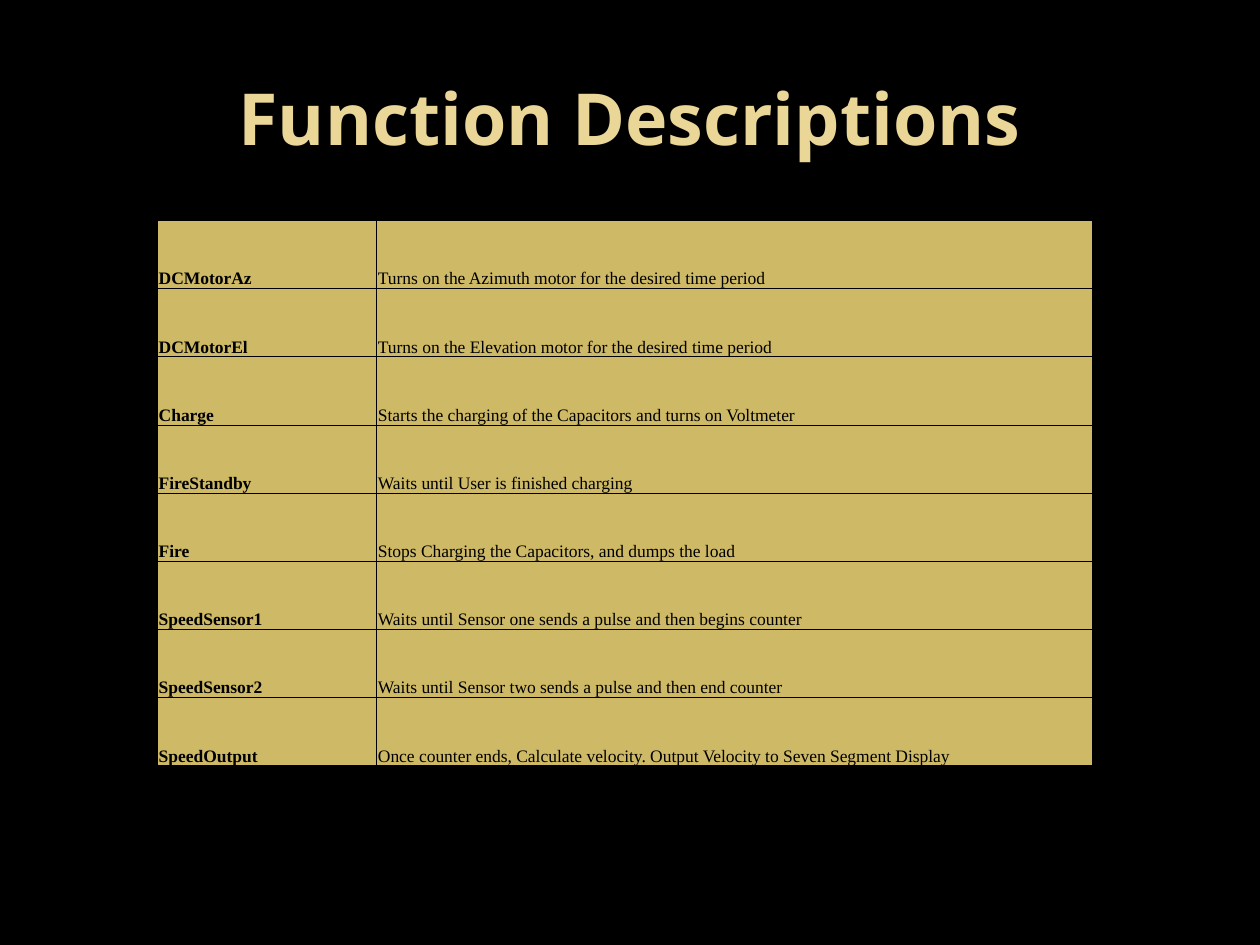
from lxml.etree import SubElement
from pptx import Presentation
from pptx.dml.color import RGBColor
from pptx.enum.text import MSO_ANCHOR, PP_ALIGN
from pptx.oxml.ns import qn
from pptx.util import Inches, Pt

TITLE = "Function Descriptions"
FUNCTIONS = [
    ("DCMotorAz", "Turns on the Azimuth motor for the desired time period"),
    ("DCMotorEl", "Turns on the Elevation motor for the desired time period"),
    ("Charge", "Starts the charging of the Capacitors and turns on Voltmeter"),
    ("FireStandby", "Waits until User is finished charging"),
    ("Fire", "Stops Charging the Capacitors, and dumps the load"),
    ("SpeedSensor1", "Waits until Sensor one sends a pulse and then begins counter"),
    ("SpeedSensor2", "Waits until Sensor two sends a pulse and then end counter"),
    ("SpeedOutput", "Once counter ends, Calculate velocity. "
                    "Output Velocity to Seven Segment Display"),
]
BLACK, GOLD, PALE_GOLD = "000000", "CEB966", "EAD696"
COLUMN_WIDTHS = (1.74, 5.68)
TABLE_LEFT, TABLE_TOP, TABLE_HEIGHT = 1.25, 1.75, 4.33


def rgb(color):
    return RGBColor.from_string(color)


def style_text(frame, font_name, size, color, bold):
    for paragraph in frame.paragraphs:
        for run in paragraph.runs:
            font = run.font
            font.name, font.size, font.bold = font_name, Pt(size), bold
            font.color.rgb = rgb(color)


def add_borders(cell, color, width):
    properties = cell._tc.get_or_add_tcPr()
    for side in ("a:lnL", "a:lnR", "a:lnT", "a:lnB"):
        line = SubElement(properties, qn(side), w=str(Pt(width)))
        fill = SubElement(line, qn("a:solidFill"))
        SubElement(fill, qn("a:srgbClr"), val=color)


def add_title(slide):
    title = slide.shapes.add_textbox(Inches(0.5), Inches(0.3), Inches(9), Inches(1.25))
    frame = title.text_frame
    frame.word_wrap = True
    frame.vertical_anchor = MSO_ANCHOR.MIDDLE
    frame.text = TITLE
    frame.paragraphs[0].alignment = PP_ALIGN.CENTER
    style_text(frame, "Noto Sans", 41, PALE_GOLD, True)


def add_function_table(slide):
    table = slide.shapes.add_table(
        len(FUNCTIONS), len(COLUMN_WIDTHS), Inches(TABLE_LEFT), Inches(TABLE_TOP),
        Inches(sum(COLUMN_WIDTHS)), Inches(TABLE_HEIGHT)).table
    table.first_row = table.horz_banding = False
    for column, width in zip(table.columns, COLUMN_WIDTHS):
        column.width = Inches(width)
    for row, entry in zip(table.rows, FUNCTIONS):
        for index, (cell, text) in enumerate(zip(row.cells, entry)):
            cell.text = text
            cell.vertical_anchor = MSO_ANCHOR.BOTTOM
            cell.margin_left = cell.margin_right = cell.margin_top = Inches(0.01)
            cell.margin_bottom = 0
            add_borders(cell, BLACK, 0.5)
            cell.fill.solid()
            cell.fill.fore_color.rgb = rgb(GOLD)
            style_text(cell.text_frame, "Times New Roman", 10, BLACK, index == 0)


def main():
    deck = Presentation()
    deck.slide_width, deck.slide_height = Inches(10), Inches(7.5)
    slide = deck.slides.add_slide(deck.slide_layouts[6])
    slide.background.fill.solid()
    slide.background.fill.fore_color.rgb = rgb(BLACK)
    add_title(slide)
    add_function_table(slide)
    deck.save("out.pptx")


if __name__ == "__main__":
    main()
